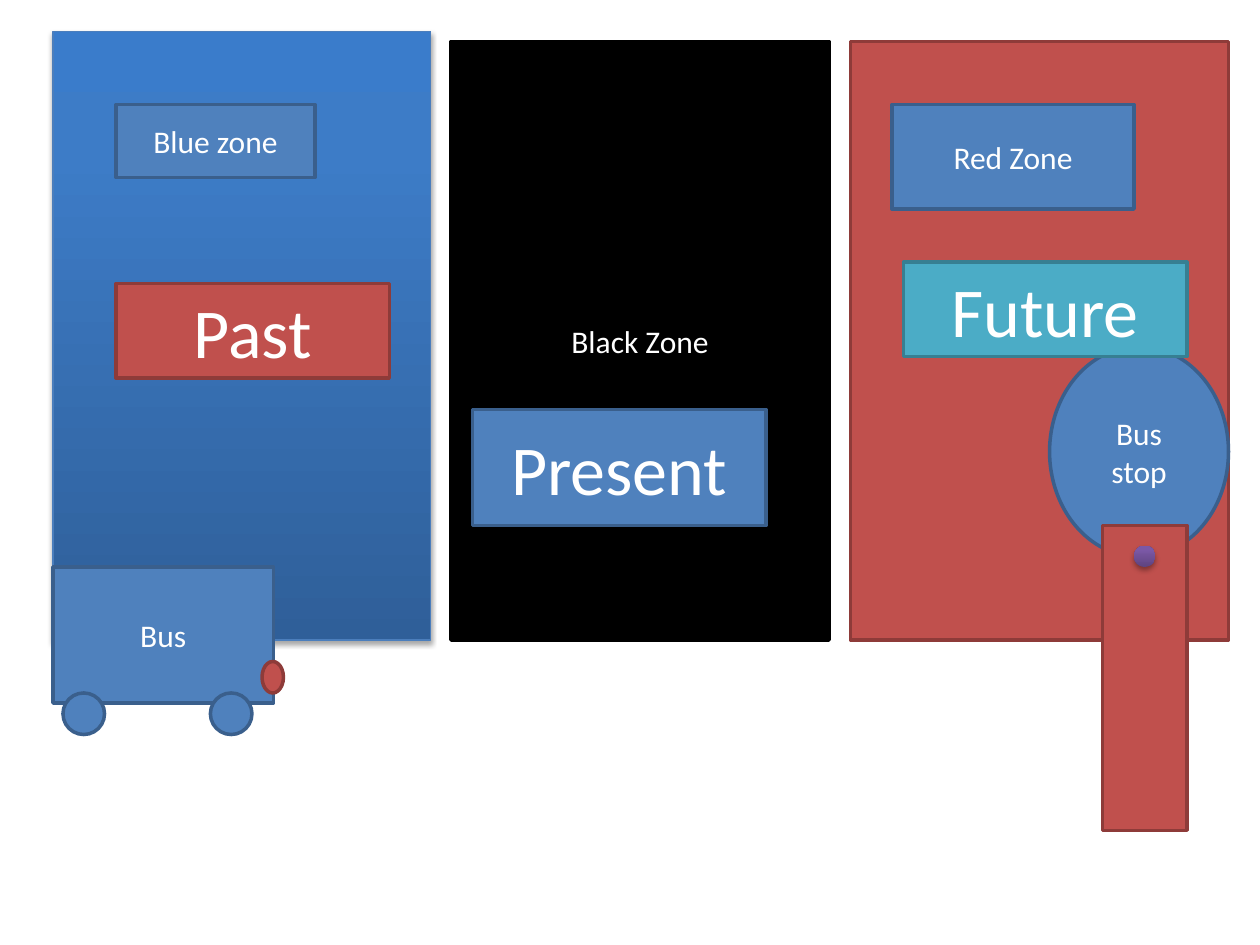
from copy import deepcopy

from lxml.etree import SubElement as Sub
from pptx import Presentation
from pptx.dml.color import RGBColor
from pptx.enum.shapes import MSO_SHAPE as Kind
from pptx.enum.text import MSO_ANCHOR as Anchor, PP_ALIGN as Align
from pptx.oxml.ns import qn
from pptx.util import Inches, Pt

RECT, OVAL = Kind.RECTANGLE, Kind.OVAL
BLUE = ("4F81BD", "3A5F8C")
RED = ("C0504D", "8E3B39")
TEAL = ("4BACC6", "377F92")
BLACK = ("000000", "000000")
SKY = ("2F5F99", "3D7CC7", "3A7CCB")
PLUM = ("5F4480", "7B58A6", "7C57A8")


def paint(target, hue):
    target.rgb = RGBColor.from_string(hue)


def write(shape, text, size=18, hue="FFFFFF", font="Calibri"):
    frame = shape.text_frame
    frame.word_wrap = True
    frame.vertical_anchor = Anchor.MIDDLE
    para = frame.paragraphs[0]
    para.alignment = Align.CENTER
    run = para.add_run()
    run.text = text
    run.font.size = Pt(size)
    run.font.name = font
    paint(run.font.color, hue)


def place(shapes, kind, box):
    shape = shapes.add_shape(kind, *map(Inches, box))
    shape.shadow.inherit = False
    return shape


def border(shape, hue, width):
    paint(shape.line.color, hue)
    shape.line.width = Pt(width)


def flat(shapes, kind, box, tone, text=None, **style):
    shape = place(shapes, kind, box)
    shape.fill.solid()
    paint(shape.fill.fore_color, tone[0])
    border(shape, tone[1], 2)
    if text:
        write(shape, text, **style)


def shade(shape):
    effects = shape._element.spPr.find(qn("a:effectLst"))
    outer = Sub(effects, qn("a:outerShdw"), blurRad=str(Pt(3.1)),
                dist=str(Pt(1.8)), dir="5400000", rotWithShape="0")
    color = Sub(outer, qn("a:srgbClr"), val="000000")
    Sub(color, qn("a:alpha"), val="35000")


def glossy(shapes, kind, box, hues, edge=None):
    shape = place(shapes, kind, box)
    fill = shape.fill
    fill.gradient()
    fill.gradient_angle = 90
    stops = shape._element.spPr.find(qn("a:gradFill")).find(qn("a:gsLst"))
    stops.append(deepcopy(stops[-1]))
    for stop, hue, spot in zip(fill.gradient_stops, hues, (0, 0.8, 1)):
        paint(stop.color, hue)
        stop.position = spot
    if edge:
        border(shape, edge, 0.75)
    else:
        shape.line.fill.background()
    shade(shape)


def zones(shapes):
    glossy(shapes, RECT, (0.42, 0.25, 3, 4.83), SKY, edge="4B7EBC")
    flat(shapes, RECT, (3.58, 0.33, 3, 4.75), BLACK, "Black Zone")
    flat(shapes, RECT, (6.75, 0.33, 3, 4.75), RED)


def stop_sign(shapes):
    flat(shapes, OVAL, (8.33, 2.75, 1.42, 1.67), BLUE, "Bus stop")
    flat(shapes, RECT, (8.75, 4.17, 0.67, 2.42), RED)
    glossy(shapes, OVAL, (9, 4.33, 0.17, 0.17), PLUM)


def bus(shapes):
    parts = shapes.add_group_shape().shapes
    flat(parts, RECT, (0.42, 4.5, 1.75, 1.08), BLUE, "Bus")
    for left in (0.5, 1.67):
        flat(parts, OVAL, (left, 5.5, 0.33, 0.33), BLUE)
    flat(parts, OVAL, (2.08, 5.25, 0.17, 0.25), RED)


def main():
    deck = Presentation()
    deck.slide_width, deck.slide_height = Inches(10), Inches(7.5)
    shapes = deck.slides.add_slide(deck.slide_layouts[6]).shapes
    zones(shapes)
    stop_sign(shapes)
    flat(shapes, RECT, (0.92, 0.83, 1.58, 0.58), BLUE, "Blue zone")
    flat(shapes, RECT, (7.08, 0.83, 1.92, 0.83), BLUE, "Red Zone")
    bus(shapes)
    for text, box, tone in (
        ("Past", (0.92, 2.25, 2.17, 0.75), RED),
        ("Present", (3.75, 3.25, 2.33, 0.92), BLUE),
        ("Future", (7.17, 2.08, 2.25, 0.75), TEAL),
    ):
        flat(shapes, RECT, box, tone, text, size=40)
    deck.save("out.pptx")


if __name__ == "__main__":
    main()
